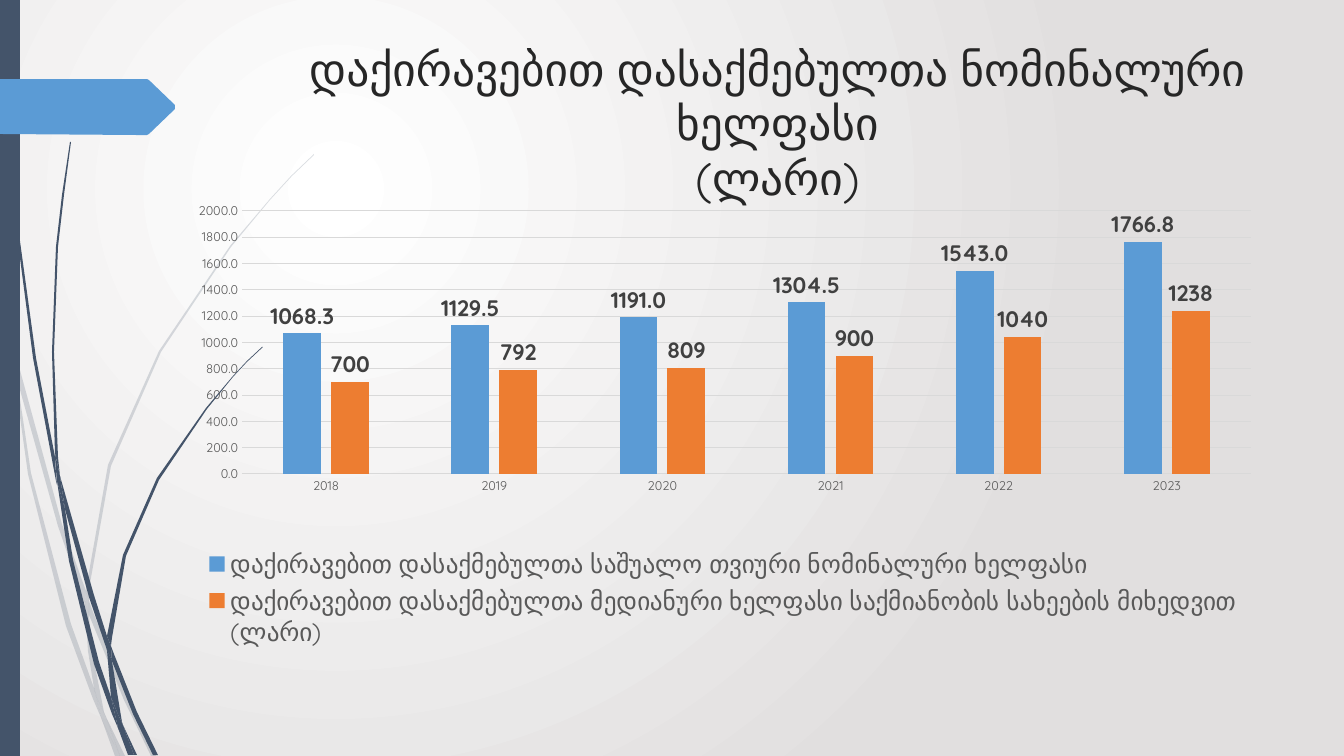
from lxml import etree
from pptx import Presentation, util as u
from pptx.chart import data as chart_data
from pptx.dml import color
from pptx.enum import chart as ch, shapes, text
from pptx.oxml import ns, parse_xml

TITLE = "დაქირავებით დასაქმებულთა ნომინალური ხელფასი\n(ლარი)"
YEARS = ["2018", "2019", "2020", "2021", "2022", "2023"]
WAGES = [
    # name, number format, values, colour
    ("დაქირავებით დასაქმებულთა საშუალო თვიური ნომინალური ხელფასი", "0.0",
     [1068.3, 1129.5, 1191.0, 1304.5, 1543.0, 1766.8], "blue"),
    ("დაქირავებით დასაქმებულთა მედიანური ხელფასი საქმიანობის სახეების მიხედვით\n(ლარი)", "0",
     [700, 792, 809, 900, 1040, 1238], "orange"),
]

# Outlines of the grass, in px
PALE_GRASS = [
    [(11, 353), (9, 325), (0, 284), (0, 301), (10, 347)],
    [(58, 526), (85, 604), (86, 591), (62, 524), (14, 348), (17, 379)],
    [(93, 612), (89, 601), (89, 615), (124, 700), (151, 756), (156, 756), (128, 698)],
    [(120, 756), (125, 756), (106, 717)],
    [(94, 688), (71, 624), (31, 473), (17, 379), (11, 353), (28, 474), (66, 626),
     (93, 699), (102, 720), (100, 713)],
    [(85, 604), (88, 651), (94, 688), (97, 698), (106, 717), (104, 712), (92, 651),
     (89, 615), (89, 613)],
    [(89, 589), (111, 466), (161, 352), (231, 247), (270, 200), (292, 176), (314, 155),
     (314, 154), (291, 176), (270, 199), (230, 246), (159, 351), (108, 465), (86, 589),
     (86, 591), (89, 601)],
    [(102, 720), (115, 756), (120, 756)],
    [(89, 613), (89, 615), (89, 601), (86, 591), (85, 604)],
    [(97, 698), (94, 688), (100, 713), (102, 720), (120, 756), (106, 717)],
]
DARK_GRASS = [
    [(7, 111), (17, 235), (33, 358), (56, 481), (57, 485), (55, 461), (55, 457),
     (36, 358), (19, 234), (8, 110), (5, 48), (4, 0), (3, 0), (4, 48)],
    [(89, 597), (107, 650), (107, 638), (107, 636), (94, 595), (60, 476), (65, 509)],
    [(114, 654), (111, 646), (112, 661), (133, 714), (153, 755), (158, 755), (137, 712)],
    [(111, 697), (99, 662), (73, 560), (65, 509), (57, 481), (69, 561), (94, 664),
     (112, 714), (118, 728), (117, 723)],
    [(60, 476), (58, 457), (54, 352), (58, 247), (64, 195), (71, 142), (70, 142),
     (62, 195), (56, 247), (52, 352), (55, 453)],
    [(134, 755), (137, 755), (123, 725)],
    [(57, 481), (65, 509), (60, 476), (55, 453), (55, 457)],
    [(112, 638), (126, 556), (159, 480), (207, 409), (233, 377), (247, 362), (263, 347),
     (262, 347), (247, 361), (233, 376), (206, 408), (157, 478), (123, 555), (107, 636),
     (111, 646)],
    [(118, 728), (128, 755), (132, 755)],
    [(107, 650), (111, 697), (117, 712), (123, 725), (122, 722), (112, 661), (110, 656)],
    [(107, 650), (110, 656), (112, 661), (111, 646), (107, 636), (107, 638)],
    [(117, 712), (111, 697), (117, 723), (118, 728), (131, 755), (134, 755), (123, 725)],
]
TAG = [(175, 109), (149, 134), (147, 135), (137, 135), (0, 134), (0, 79), (137, 79),
       (147, 79), (149, 80), (175, 105)]
PALE_OPACITY = 20

SLIDE = (1344, 756)
STRIPE = (0, 0, 20, 756)
TITLE_BOX = (286, 36, 983, 174)
CHART_BOX = (178, 200, 1090, 453)
PLOT_BOX = (64, 11, 1009, 263)  # within the chart


class Theme:
    font = "Quicksand"
    colors = {name: color.RGBColor.from_string(code) for name, code in {
        "white": "FFFFFF", "backdrop": "E1DFDF", "navy": "44546A",
        "blue": "5B9BD5", "orange": "ED7D31", "title": "262626",
        "label": "404040", "muted": "595959", "grid": "D9D9D9"}.items()}
    title, legend, label, chart, axis = 32.4, 18, 16, 10, 9
    hairline = u.Pt(0.75)


EMU_PER_PX = u.Inches(1) / 100.8


def px(length):
    return u.Emu(round(length * EMU_PER_PX))


def style(font, size, tint, bold=False):
    font.name, font.size, font.bold = Theme.font, u.Pt(size), bold
    font.color.rgb = Theme.colors[tint]


def paint(shape, tint, opacity=100):
    shape.shadow.inherit = False
    shape.fill.solid()
    shape.fill.fore_color.rgb = Theme.colors[tint]
    shape.line.fill.background()
    if opacity < 100:
        solid = shape.fill._xPr.find(ns.qn("a:solidFill"))
        etree.SubElement(solid[0], ns.qn("a:alpha"), val=str(opacity * 1000))


def add_outline(slide, points, tint, opacity=100):
    builder = slide.shapes.build_freeform(*points[0], scale=EMU_PER_PX)
    builder.add_line_segments(points[1:], close=True)
    paint(builder.convert_to_shape(), tint, opacity)


def add_backdrop(slide):
    """Circular gradient, brightest in the upper left quarter."""
    fill = slide.background.fill
    fill.gradient()
    for stop, tint in zip(fill.gradient_stops, ("white", "backdrop")):
        stop.color.rgb = Theme.colors[tint]
    linear = slide._element.find(".//" + ns.qn("a:lin"))
    linear.getparent().replace(linear, parse_xml(
        f'<a:path {ns.nsdecls("a")} path="circle">'
        '<a:fillToRect l="50000" t="50000" r="100000" b="100000"/></a:path>'))


def add_title(slide):
    frame = slide.shapes.add_textbox(*map(px, TITLE_BOX)).text_frame
    frame.word_wrap = True
    frame.vertical_anchor = text.MSO_ANCHOR.TOP
    heading = frame.paragraphs[0]
    heading.text = TITLE
    heading.alignment = text.PP_ALIGN.CENTER
    for run in heading.runs:
        style(run.font, Theme.title, "title")


def place_plot(chart):
    area = chart._chartSpace.chart.plotArea
    for old in area.findall(ns.qn("c:layout")):
        area.remove(old)
    modes = '<c:xMode val="edge"/><c:yMode val="edge"/>'
    sizes = "".join(f'<c:{side} val="{part / whole}"/>' for side, part, whole
                    in zip("xywh", PLOT_BOX, CHART_BOX[2:] * 2))
    area.insert(0, parse_xml(
        f'<c:layout {ns.nsdecls("c")}><c:manualLayout>'
        f'<c:layoutTarget val="inner"/>{modes}{sizes}</c:manualLayout></c:layout>'))


def add_wage_chart(slide):
    wages = chart_data.CategoryChartData()
    wages.categories = YEARS
    for name, number_format, values, _ in WAGES:
        wages.add_series(name, values, number_format)
    chart = slide.shapes.add_chart(
        ch.XL_CHART_TYPE.COLUMN_CLUSTERED, *map(px, CHART_BOX), wages).chart
    chart.has_title = False
    chart.font.name, chart.font.size = Theme.font, u.Pt(Theme.chart)
    place_plot(chart)

    for axis in (chart.category_axis, chart.value_axis):
        axis.major_tick_mark = axis.minor_tick_mark = ch.XL_TICK_MARK.NONE
        style(axis.tick_labels.font, Theme.axis, "muted")
    scale = chart.value_axis
    scale.minimum_scale, scale.maximum_scale, scale.major_unit = 0, 2000, 200
    scale.tick_labels.number_format = "0.0"
    scale.tick_labels.number_format_is_linked = False
    scale.format.line.fill.background()
    for line in (chart.category_axis.format.line, scale.major_gridlines.format.line):
        line.color.rgb, line.width = Theme.colors["grid"], Theme.hairline

    chart.has_legend = True
    chart.legend.position = ch.XL_LEGEND_POSITION.BOTTOM
    chart.legend.include_in_layout = False
    style(chart.legend.font, Theme.legend, "muted")

    columns = chart.plots[0]
    columns.gap_width, columns.overlap = 219, -27
    columns.vary_by_categories = False
    for series, (_, number_format, _, tint) in zip(columns.series, WAGES):
        series.format.fill.solid()
        series.format.fill.fore_color.rgb = Theme.colors[tint]
        labels = series.data_labels
        labels.show_value = True
        labels.position = ch.XL_LABEL_POSITION.OUTSIDE_END
        labels.number_format, labels.number_format_is_linked = number_format, False
        style(labels.font, Theme.label, "label", bold=True)


def main():
    deck = Presentation()
    deck.slide_width, deck.slide_height = map(px, SLIDE)
    slide = deck.slides.add_slide(deck.slide_layouts[6])
    add_backdrop(slide)
    for grass, opacity in ((PALE_GRASS, PALE_OPACITY), (DARK_GRASS, 100)):
        for blade in grass:
            add_outline(slide, blade, "navy", opacity)
    paint(slide.shapes.add_shape(shapes.MSO_SHAPE.RECTANGLE, *map(px, STRIPE)), "navy")
    add_outline(slide, TAG, "blue")
    add_title(slide)
    add_wage_chart(slide)
    deck.save("out.pptx")


if __name__ == "__main__":
    main()
